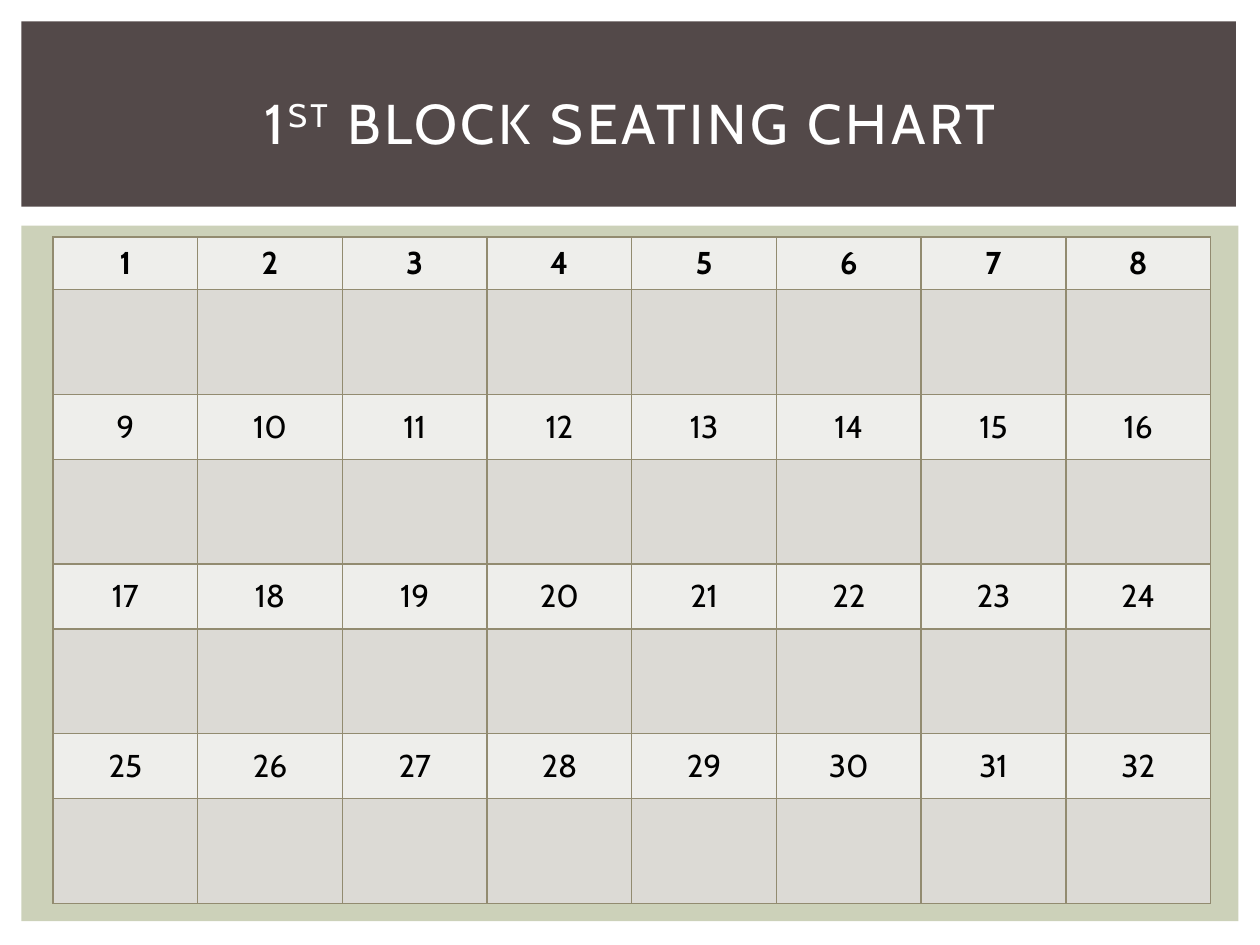
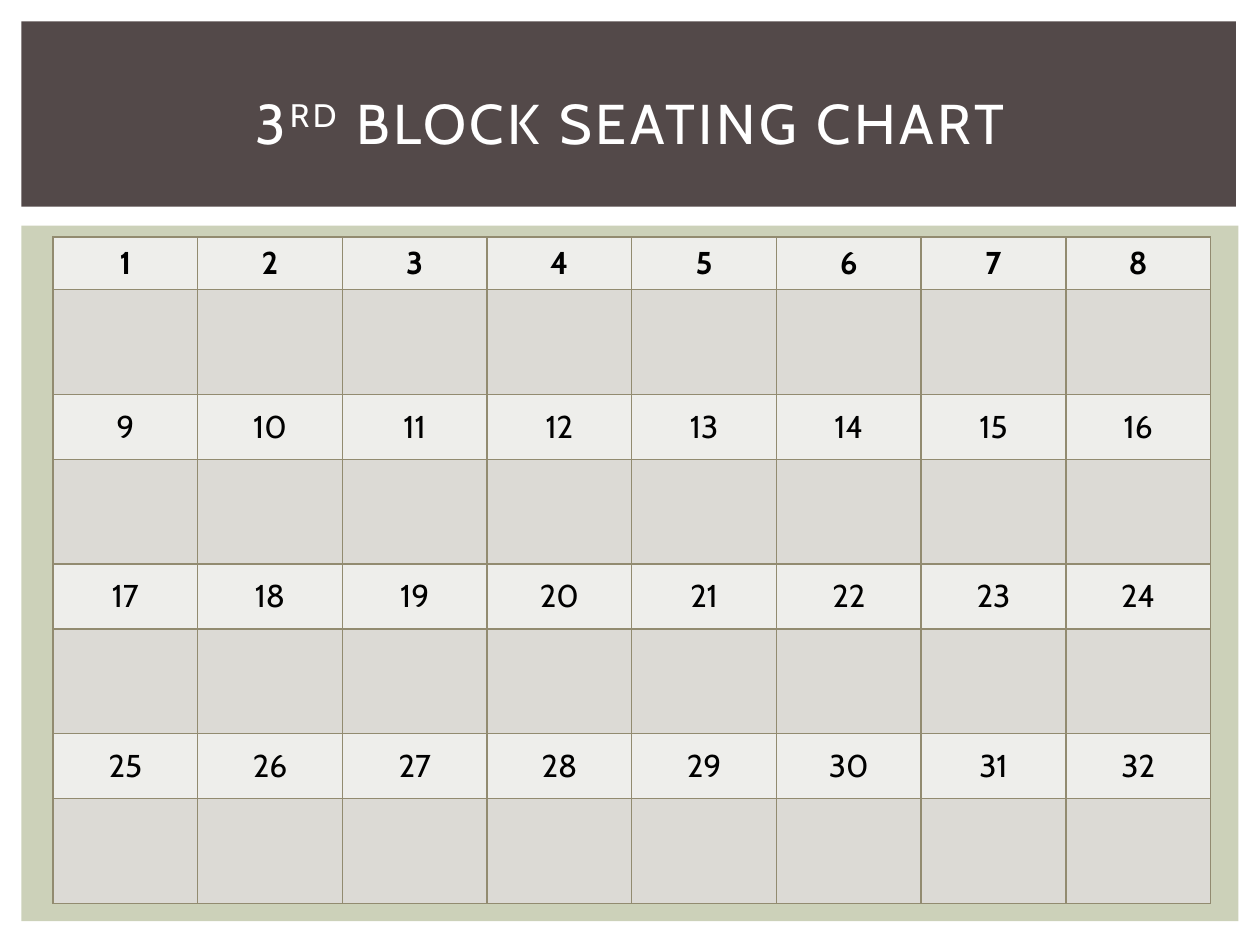
from lxml import etree
from pptx import Presentation
from pptx.dml.color import RGBColor
from pptx.enum.shapes import MSO_SHAPE
from pptx.enum.text import MSO_ANCHOR, MSO_AUTO_SIZE, PP_ALIGN
from pptx.oxml.ns import qn
from pptx.util import Inches, Pt

RECTANGLE = MSO_SHAPE.RECTANGLE
MIDDLE = MSO_ANCHOR.MIDDLE
CENTER = PP_ALIGN.CENTER
NO_AUTOFIT = MSO_AUTO_SIZE.NONE

WHITE = RGBColor(0xFF, 0xFF, 0xFF)
BLACK = RGBColor(0x00, 0x00, 0x00)
BROWN = RGBColor(0x53, 0x49, 0x49)
SAGE = RGBColor(0xCC, 0xD1, 0xB9)
LABEL_FILL = RGBColor(0xEE, 0xEE, 0xEB)
SEAT_FILL = RGBColor(0xDC, 0xDA, 0xD5)
BORDER = RGBColor(0x92, 0x8B, 0x70)

FONT = "Cabin"
TITLE_ONLY = 5
SLIDE_W, SLIDE_H = Inches(10), Inches(7.5)
GRID_COLS, GRID_ROWS = 100, 75

BODY_BAND = (1.7, 17.9, 96.6, 55.2)
TITLE_BAND = (1.7, 1.7, 96.4, 14.7)
TITLE_BOX = (4.2, 3.9, 91.7, 11.5)
TABLE_BOX = (4.2, 18.8, 91.9, 52.9)

SEAT_COLS, SEAT_ROWS = 8, 4
HEADER_H, SEAT_H = 4.2, 8.3
LABEL_H = (TABLE_BOX[3] - HEADER_H - SEAT_ROWS * SEAT_H) / (SEAT_ROWS - 1)

BLOCKS = [("1", "ST"), ("3", "RD")]


def across(cols):
    return round(SLIDE_W * cols / GRID_COLS)


def down(rows):
    return round(SLIDE_H * rows / GRID_ROWS)


def place(box):
    x, y, w, h = box
    return across(x), down(y), across(w), down(h)


def add_run(p, text, size, color, bold=False, spacing=0, baseline=0):
    r = p.add_run()
    r.text = text
    r.font.name = FONT
    r.font.size = Pt(size)
    r.font.bold = bold
    r.font.color.rgb = color
    rpr = r.font._element
    if spacing:
        rpr.set("spc", str(spacing * 100))
    if baseline:
        rpr.set("baseline", str(baseline * 1000))


def add_band(s, box, color):
    sp = s.shapes.add_shape(RECTANGLE, *place(box))
    sp.shadow.inherit = False
    sp.fill.solid()
    sp.fill.fore_color.rgb = color
    sp.line.fill.background()


def add_title(s, number, suffix):
    sp = s.shapes.title
    sp.left, sp.top, sp.width, sp.height = place(TITLE_BOX)
    tf = sp.text_frame
    tf.word_wrap = True
    tf.auto_size = NO_AUTOFIT
    tf.vertical_anchor = MIDDLE
    p = tf.paragraphs[0]
    p.alignment = CENTER
    for text, baseline in ((number, 0), (suffix, 30), (" BLOCK SEATING CHART", 0)):
        add_run(p, text, 32, WHITE, spacing=2, baseline=baseline)
    s.shapes._spTree.append(sp._element)


def style_cell(cell, color):
    tcpr = cell._tc.get_or_add_tcPr()
    for side in ("a:lnL", "a:lnR", "a:lnT", "a:lnB"):
        ln = etree.SubElement(tcpr, qn(side), w=str(Pt(1)))
        fill = etree.SubElement(ln, qn("a:solidFill"))
        etree.SubElement(fill, qn("a:srgbClr"), val=str(BORDER))
    cell.fill.solid()
    cell.fill.fore_color.rgb = color
    cell.vertical_anchor = MIDDLE


def add_seating_table(s):
    table = s.shapes.add_table(2 * SEAT_ROWS, SEAT_COLS, *place(TABLE_BOX)).table
    table.first_row = table.horz_banding = False
    for col in table.columns:
        col.width = across(TABLE_BOX[2] / SEAT_COLS)
    for i in range(SEAT_ROWS):
        table.rows[2 * i].height = down(LABEL_H if i else HEADER_H)
        table.rows[2 * i + 1].height = down(SEAT_H)
        for j in range(SEAT_COLS):
            label = table.cell(2 * i, j)
            style_cell(label, LABEL_FILL)
            p = label.text_frame.paragraphs[0]
            p.alignment = CENTER
            add_run(p, str(i * SEAT_COLS + j + 1), 18, BLACK, bold=i == 0)
            style_cell(table.cell(2 * i + 1, j), SEAT_FILL)


def add_seating_slide(prs, number, suffix):
    s = prs.slides.add_slide(prs.slide_layouts[TITLE_ONLY])
    add_band(s, BODY_BAND, SAGE)
    add_band(s, TITLE_BAND, BROWN)
    add_seating_table(s)
    add_title(s, number, suffix)


def main():
    prs = Presentation()
    prs.slide_width, prs.slide_height = SLIDE_W, SLIDE_H
    for number, suffix in BLOCKS:
        add_seating_slide(prs, number, suffix)
    prs.save("out.pptx")


if __name__ == "__main__":
    main()
